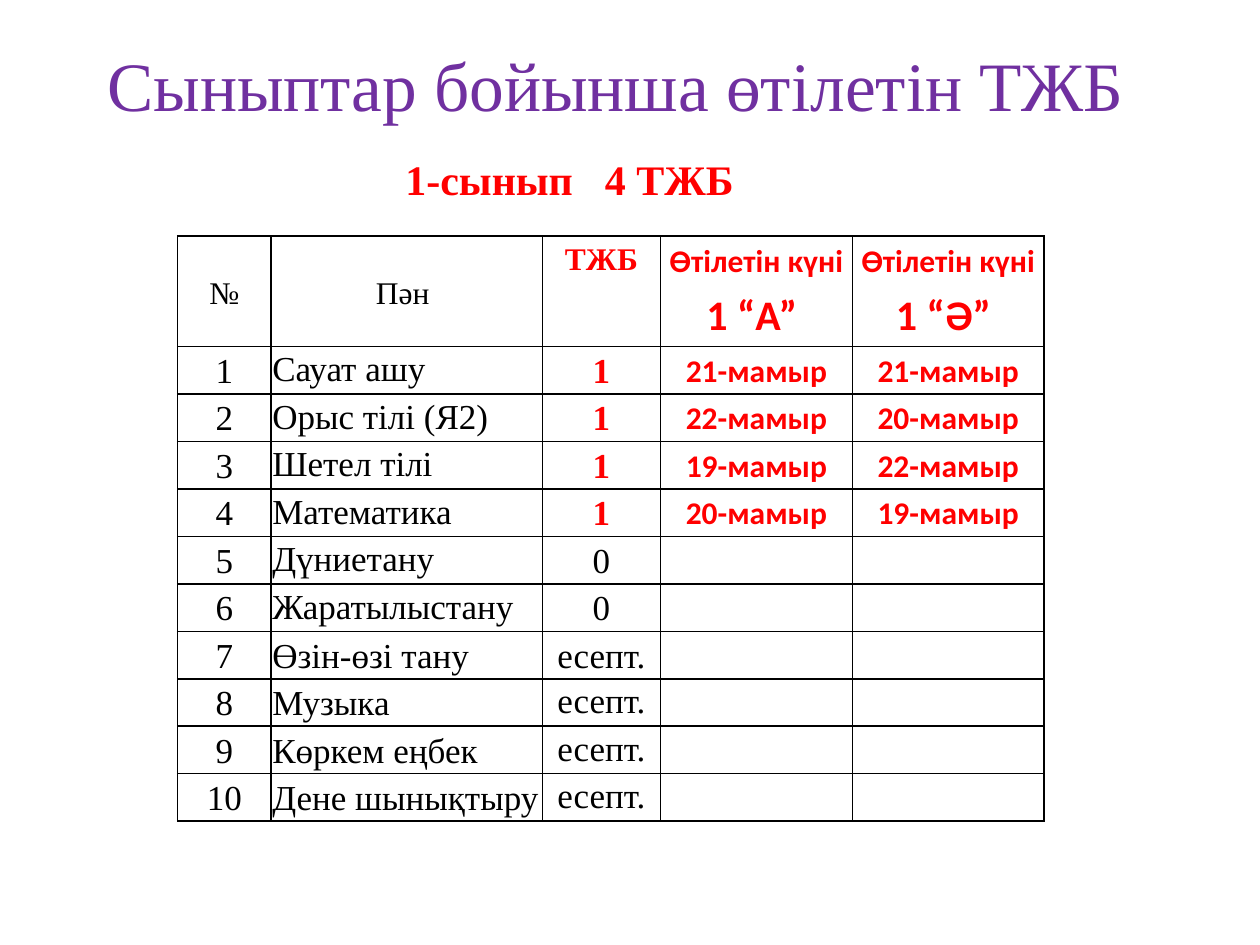
from dataclasses import dataclass

from lxml.etree import SubElement
from pptx import Presentation
from pptx.dml.color import RGBColor
from pptx.enum.text import MSO_ANCHOR, PP_ALIGN
from pptx.oxml.ns import qn
from pptx.util import Pt

PURPLE = RGBColor(0x70, 0x30, 0xA0)
RED = RGBColor(0xFF, 0x00, 0x00)
BLACK = RGBColor(0x00, 0x00, 0x00)
SERIF = "Times New Roman"
SANS = "Calibri"


@dataclass(frozen=True)
class Style:
    size: float
    font: str = SERIF
    color: RGBColor = BLACK
    bold: bool = False


@dataclass(frozen=True)
class Line:
    text: str
    style: Style
    align: PP_ALIGN = PP_ALIGN.CENTER
    spacing: float = 1.0
    after: float = 0


@dataclass(frozen=True)
class Subject:
    name: str
    count: str
    dates: tuple[str, str] = ("", "")


TITLE = Style(39.6, color=PURPLE)
SUBTITLE = Style(24, color=RED, bold=True)
HEADING = Style(18)
RED_HEADING = Style(18, color=RED, bold=True)
DATE = Style(18, SANS, RED, True)
CLASS_NAME = Style(24, SANS, RED, True)
BODY = Style(20)
COUNT = Style(20, color=RED, bold=True)

SUBJECTS = [
    Subject("Сауат ашу", "1", ("21-мамыр", "21-мамыр")),
    Subject("Орыс тілі (Я2)", "1", ("22-мамыр", "20-мамыр")),
    Subject("Шетел тілі", "1", ("19-мамыр", "22-мамыр")),
    Subject("Математика", "1", ("20-мамыр", "19-мамыр")),
    Subject("Дүниетану", "0"),
    Subject("Жаратылыстану", "0"),
    Subject("Өзін-өзі тану", "есепт."),
    Subject("Музыка", "есепт."),
    Subject("Көркем еңбек", "есепт."),
    Subject("Дене шынықтыру", "есепт."),
]
COLUMN_WIDTHS = [53.4, 155, 67.6, 109.6, 109.6]
ROW_HEIGHTS = [63.2] + [25.95] * 5 + [25.4] + [25.95] * 3 + [25.1]


def write_lines(frame, lines: list[Line]) -> None:
    for index, line in enumerate(lines):
        para = frame.add_paragraph() if index else frame.paragraphs[0]
        para.alignment = line.align
        para.line_spacing = line.spacing
        para.space_before = Pt(0)
        para.space_after = Pt(line.after)
        para.font.size = Pt(line.style.size)
        if not line.text:
            continue
        span = para.add_run()
        span.text = line.text
        span.font.size = Pt(line.style.size)
        span.font.name = line.style.font
        span.font.bold = line.style.bold
        span.font.color.rgb = line.style.color


def add_text(page, left: float, top: float, width: float, height: float,
             line: Line, anchor: MSO_ANCHOR):
    box = page.shapes.add_textbox(Pt(left), Pt(top), Pt(width), Pt(height))
    box.text_frame.word_wrap = True
    box.text_frame.vertical_anchor = anchor
    write_lines(box.text_frame, [line])
    return box


def add_tab_stop(para, position: float) -> None:
    stops = SubElement(para._p.get_or_add_pPr(), qn("a:tabLst"))
    SubElement(stops, qn("a:tab"), pos=str(Pt(position)), algn="l")


def draw_borders(cell) -> None:
    properties = cell._tc.get_or_add_tcPr()
    for side in ("lnL", "lnR", "lnT", "lnB"):
        border = SubElement(properties, qn(f"a:{side}"), w=str(Pt(1)))
        fill = SubElement(border, qn("a:solidFill"))
        SubElement(fill, qn("a:srgbClr"), val=str(BLACK))


def fill_cell(cell, lines: list[Line], anchor: MSO_ANCHOR) -> None:
    draw_borders(cell)
    cell.fill.background()
    cell.margin_left = cell.margin_right = Pt(0.72)
    cell.margin_top = cell.margin_bottom = Pt(0.72)
    cell.vertical_anchor = anchor
    write_lines(cell.text_frame, lines)


def heading(text: str, style: Style) -> Line:
    return Line(text, style, spacing=1.15, after=1)


def entry(text: str, style: Style, align: PP_ALIGN = PP_ALIGN.CENTER) -> Line:
    return Line(text, style, align, 1.07)


def add_schedule(page) -> None:
    table = page.shapes.add_table(
        len(ROW_HEIGHTS), len(COLUMN_WIDTHS), Pt(101.5), Pt(134.8),
        Pt(sum(COLUMN_WIDTHS)), Pt(sum(ROW_HEIGHTS))).table
    table.first_row = False
    table.horz_banding = False
    for column, width in zip(table.columns, COLUMN_WIDTHS):
        column.width = Pt(width)
    for row, height in zip(table.rows, ROW_HEIGHTS):
        row.height = Pt(height)

    middle, top = MSO_ANCHOR.MIDDLE, MSO_ANCHOR.TOP
    fill_cell(table.cell(0, 0), [heading("№", HEADING)], middle)
    fill_cell(table.cell(0, 1), [heading("Пән ", HEADING)], middle)
    fill_cell(table.cell(0, 2), [heading("ТЖБ", RED_HEADING)], top)
    for column, group in enumerate(("1 “А” ", "1 “Ә” "), 3):
        lines = [heading("Өтілетін күні", DATE), heading(group, CLASS_NAME)]
        fill_cell(table.cell(0, column), lines, top)

    for number, subject in enumerate(SUBJECTS, 1):
        late = number > 6
        align = PP_ALIGN.JUSTIFY if late else PP_ALIGN.LEFT
        count_style = COUNT if subject.count == "1" else BODY
        fill_cell(table.cell(number, 0), [entry(str(number), BODY)], middle)
        fill_cell(table.cell(number, 1), [entry(subject.name, BODY, align)],
                  middle if late else top)
        fill_cell(table.cell(number, 2), [entry(subject.count, count_style)],
                  top if number > 7 else middle)
        for column, date in enumerate(subject.dates, 3):
            fill_cell(table.cell(number, column), [entry(date, DATE)], middle)


def main() -> None:
    deck = Presentation()
    deck.slide_width, deck.slide_height = Pt(720), Pt(540)
    page = deck.slides.add_slide(deck.slide_layouts[6])
    add_text(page, 28, 16.6, 648, 62,
             Line("Сыныптар бойынша өтілетін ТЖБ", TITLE), MSO_ANCHOR.MIDDLE)
    subtitle = add_text(page, 224.6, 84.2, 210, 36,
                        Line("1-сынып\t4 ТЖБ", SUBTITLE, PP_ALIGN.LEFT),
                        MSO_ANCHOR.TOP)
    add_tab_stop(subtitle.text_frame.paragraphs[0], 114)
    add_schedule(page)
    deck.save("out.pptx")


if __name__ == "__main__":
    main()
